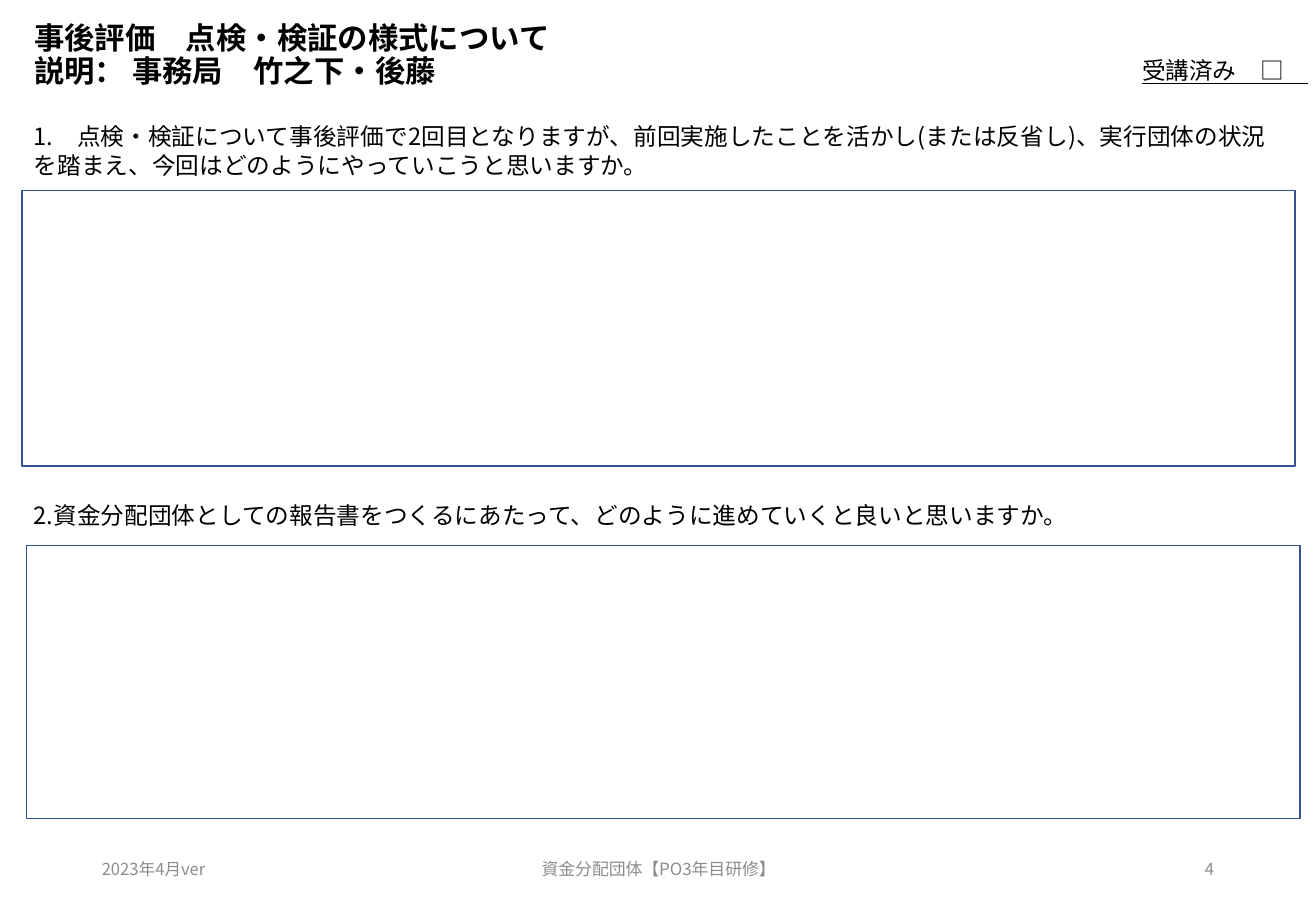
from lxml import etree
from pptx import Presentation
from pptx.dml.color import RGBColor
from pptx.enum.shapes import MSO_SHAPE
from pptx.enum.text import MSO_ANCHOR, PP_ALIGN
from pptx.oxml.ns import qn
from pptx.util import Inches, Pt

RECT = MSO_SHAPE.RECTANGLE
TOP, MIDDLE = MSO_ANCHOR.TOP, MSO_ANCHOR.MIDDLE
LEFT, CENTER, RIGHT = PP_ALIGN.LEFT, PP_ALIGN.CENTER, PP_ALIGN.RIGHT
WIDE, HIGH = Inches(10.83), Inches(7.5)
FONT = "Noto Sans CJK JP"
HEX = {"ink": "000000", "gray": "8C8C8C", "edge": "325491", "fill": "FFFFFF"}
ASKS = [
    ("1.　点検・検証について事後評価で2回目となりますが、前回実施したことを活かし(または反省し)、"
     "実行団体の状況を踏まえ、今回はどのようにやっていこうと思いますか。",
     (1.66, 12.67, 96.77, 7.6), (1.66, 20.93, 96.77, 30.27)),
    ("2.資金分配団体としての報告書をつくるにあたって、どのように進めていくと良いと思いますか。",
     (1.66, 54.27, 95.94, 4.53), (2.03, 59.87, 96.77, 30)),
]
FOOT = [
    ("2023年4月ver", 6.83, 22.53, 9.8, LEFT),
    ("資金分配団体【PO3年目研修】", 33.15, 33.8, 10, CENTER),
    ("4", 70.64, 22.53, 9.8, RIGHT),
]


def color(name):
    return RGBColor.from_string(HEX[name])


def area(x, y, w, h):
    return [int(side * share / 100) for side, share in
            ((WIDE, x), (HIGH, y), (WIDE, w), (HIGH, h))]


def write(shape, text, size=14, tone="ink", bold=False, under=False,
          align=LEFT, anchor=TOP, lead=17):
    frame = shape.text_frame
    frame.word_wrap = True
    frame.vertical_anchor = anchor
    para = frame.paragraphs[0]
    para.text = text
    para.alignment = align
    para.line_spacing = Pt(lead)
    for run in para.runs:
        font = run.font
        font.name, font.size = FONT, Pt(size)
        font.bold, font.underline = bold, under
        font.color.rgb = color(tone)
        east = etree.SubElement(run._r.get_or_add_rPr(), qn("a:ea"))
        east.set("typeface", FONT)


def label(shapes, text, spot, **style):
    box = shapes.add_textbox(*area(*spot))
    write(box, text, **style)
    return box


def field(shapes, spot):
    box = shapes.add_shape(RECT, *area(*spot))
    box.shadow.inherit = False
    box.fill.solid()
    box.fill.fore_color.rgb = color("fill")
    box.line.color.rgb = color("edge")
    box.line.width = Pt(1)


def head(title):
    title.left, title.top, title.width, title.height = area(1.66, -0.53, 91.6, 13.2)
    write(title, "事後評価　点検・検証の様式について\v説明： 事務局　竹之下・後藤",
          size=18, bold=True, anchor=MIDDLE, lead=19.5)


def main():
    deck = Presentation()
    deck.slide_width, deck.slide_height = WIDE, HIGH
    slide = deck.slides.add_slide(deck.slide_layouts[5])
    head(slide.shapes.title)
    for text, spot, room in ASKS:
        group = slide.shapes.add_group_shape()
        label(group.shapes, text, spot)
        field(group.shapes, room)
    for text, x, w, size, align in FOOT:
        label(slide.shapes, text, (x, 92.67, w, 5.33), size=size, tone="gray",
              align=align, anchor=MIDDLE, lead=12)
    check = label(slide.shapes, "受講済み　□　", (85.87, 5.47, 14.13, 4.53), under=True)
    check.text_frame.margin_right = 0
    deck.save("out.pptx")


if __name__ == "__main__":
    main()
